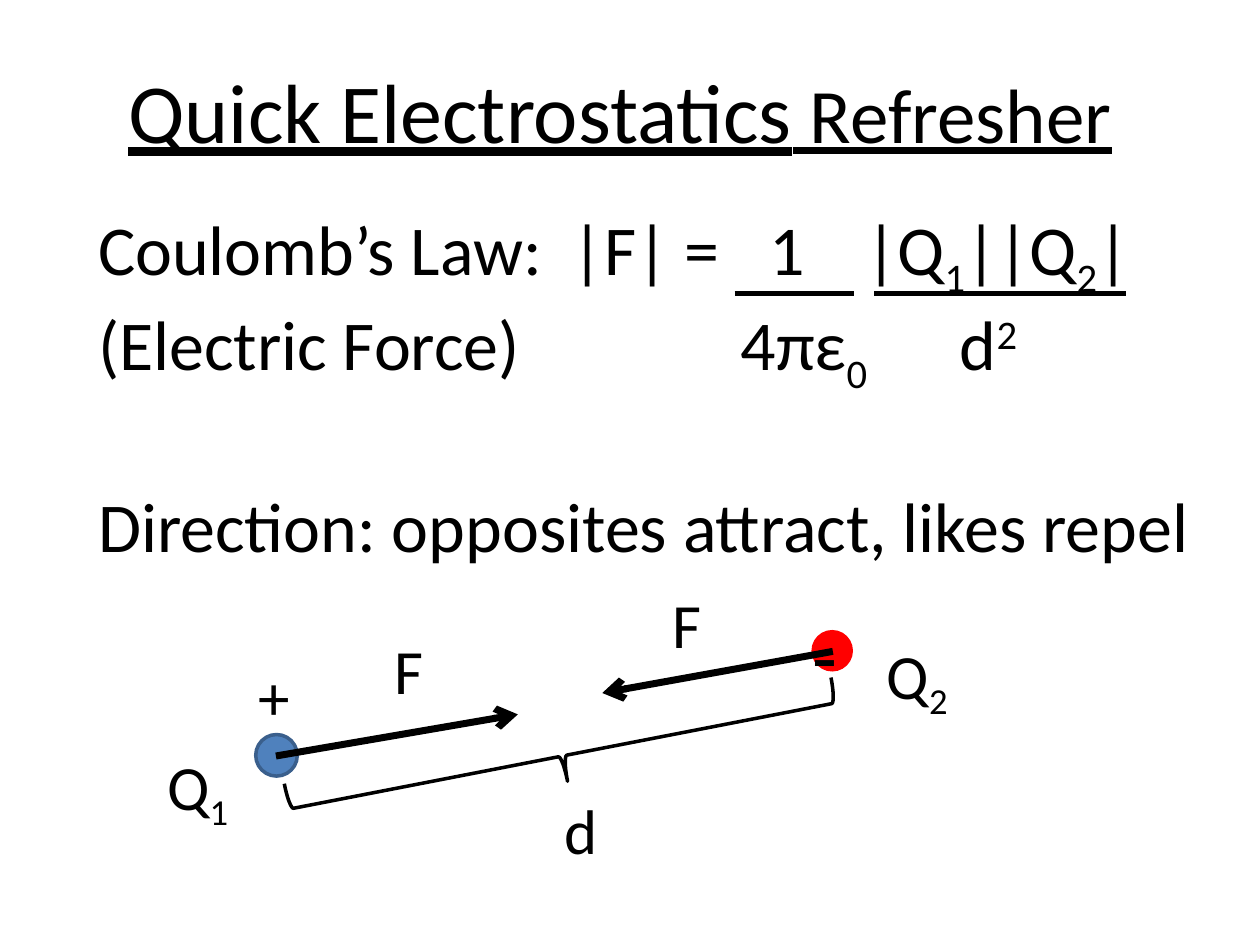
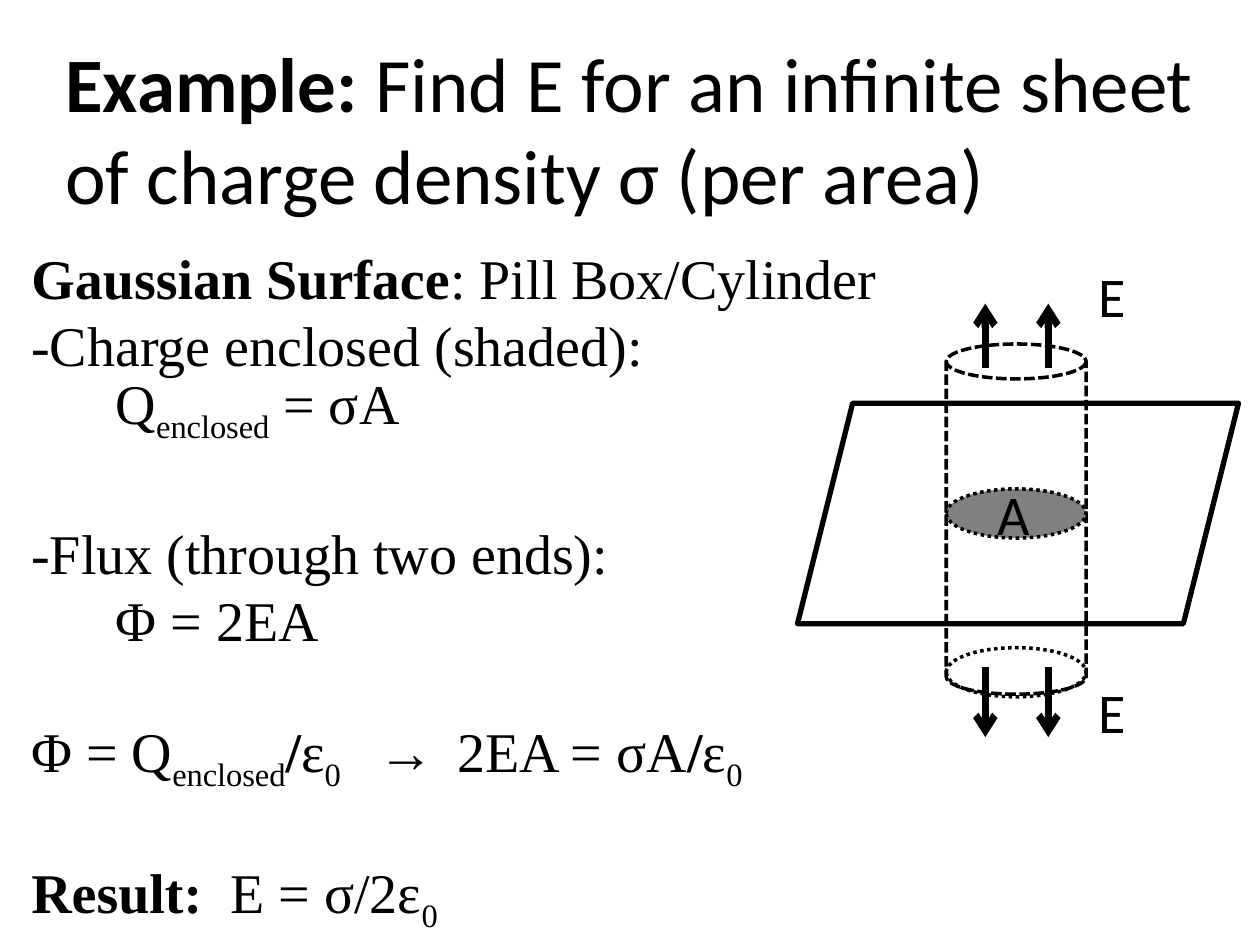
"""Build two electrostatics slides: Coulomb's law and the field of a charged sheet."""
from lxml import etree
from pptx import Presentation
from pptx.dml.color import RGBColor
from pptx.enum.dml import MSO_LINE
from pptx.enum.shapes import MSO_CONNECTOR, MSO_SHAPE
from pptx.oxml.ns import qn
from pptx.util import Inches, Pt

BLACK = RGBColor(0, 0, 0)
WHITE = RGBColor(255, 255, 255)
RED = RGBColor(255, 0, 0)
BLUE = RGBColor(0x4F, 0x81, 0xBD)
NAVY = RGBColor(0x3A, 0x5F, 0x8C)
GRAY = RGBColor(0x80, 0x80, 0x80)
OVAL, BRACE = MSO_SHAPE.OVAL, MSO_SHAPE.RIGHT_BRACE
SHEET, CAN = MSO_SHAPE.PARALLELOGRAM, MSO_SHAPE.CAN
DASH, DOT = MSO_LINE.SQUARE_DOT, MSO_LINE.ROUND_DOT
STRAIGHT = MSO_CONNECTOR.STRAIGHT
SUB, SUP = {"baseline": -25000}, {"baseline": 30000}
BOLD, PLAIN = {"bold": True}, {}


def add_text(slide, box, size, paragraphs, name="Calibri", **shared):
    tf = slide.shapes.add_textbox(*map(Inches, box)).text_frame
    tf.word_wrap = True
    for i, (runs, layout) in enumerate(paragraphs):
        p = tf.paragraphs[0] if i == 0 else tf.add_paragraph()
        layout = {**shared, **layout}
        tabs, indent = layout.pop("tabs", []), layout.pop("indent", 0)
        for key, value in layout.items():
            setattr(p, key, value)
        pPr = p._p.get_or_add_pPr()
        pPr.set("marL", str(Inches(indent)))
        if tabs:
            tab_list = etree.SubElement(pPr, qn("a:tabLst"))
            for pos in tabs:
                etree.SubElement(tab_list, qn("a:tab"), pos=str(Inches(pos)), algn="l")
        for text, style in runs:
            r = p.add_run()
            r.text = text
            r.font.color.rgb = BLACK
            style = {"size": Pt(size), "name": name, **style}
            baseline = style.pop("baseline", 0)
            for key, value in style.items():
                setattr(r.font, key, value)
            if baseline:
                r._r.get_or_add_rPr().set("baseline", str(baseline))


def add_line(slide, ends, width, arrow=False):
    c = slide.shapes.add_connector(STRAIGHT, *map(Inches, ends))
    c.line.color.rgb = BLACK
    c.line.width = Pt(width)
    if arrow:
        etree.SubElement(c.line._get_or_add_ln(), qn("a:tailEnd"), type="arrow")
    etree.SubElement(c._element.spPr, qn("a:effectLst"))


prs = Presentation()
prs.slide_width, prs.slide_height = Inches(10), Inches(7.5)
coulomb, gauss = [prs.slides.add_slide(prs.slide_layouts[6]) for _ in range(2)]

for s, kind, box, fill, color, width, dash, rotation in [
    (coulomb, OVAL, (2.03, 5.83, 0.33, 0.33), BLUE, NAVY, 2, None, 0),
    (coulomb, OVAL, (6.44, 5, 0.33, 0.33), RED, None, 0, None, 0),
    (coulomb, BRACE, (4.26, 3.79, 0.41, 4.42), None, BLACK, 2, None, 79),
    (gauss, SHEET, (6.33, 3.2, 3.5, 1.75), WHITE, BLACK, 3, None, 0),
    (gauss, CAN, (7.51, 2.73, 1.11, 2.78), None, BLACK, 2, DASH, 0),
    (gauss, OVAL, (7.51, 3.88, 1.11, 0.39), GRAY, BLACK, 2, DOT, 0),
    (gauss, OVAL, (7.51, 5.14, 1.11, 0.39), None, BLACK, 2, DOT, 0),
]:
    sp = s.shapes.add_shape(kind, *map(Inches, box))
    sp.shadow.inherit = False
    sp.rotation = rotation
    if fill is None:
        sp.fill.background()
    else:
        sp.fill.solid()
        sp.fill.fore_color.rgb = fill
    if color is None:
        sp.line.fill.background()
    else:
        sp.line.color.rgb = color
        sp.line.width = Pt(width)
        sp.line.dash_style = dash

add_text(coulomb, (0.92, 0.42, 8.33, 0.91), 44, [
    ([("Quick Electrostatics", {"size": Pt(48), "underline": True}),
      (" Refresher", {"underline": True})], {}),
])
add_text(coulomb, (0.68, 1.58, 8.92, 2.79), 40, [
    ([("Coulomb’s Law:\t|F| =\t1\t|Q", PLAIN), ("1", SUB), ("||Q", PLAIN),
      ("2", SUB), ("|", PLAIN)], {"tabs": [3.76, 5.33, 6.09]}),
    ([("(Electric Force)\t4πε", PLAIN), ("0", SUB), ("\td", PLAIN), ("2", SUP)],
     {"tabs": [5.1, 6.84]}),
    ([("Direction: opposites attract, likes repel", PLAIN)], {"space_before": Pt(49)}),
])
for ends in [(2.19, 6, 4.11, 5.67), (6.61, 5.17, 4.78, 5.5)]:
    add_line(coulomb, ends, 4, arrow=True)
for left, right in [(5.83, 6.78), (6.94, 8.94)]:
    add_line(coulomb, (left, 2.33, right, 2.33), 3)
for label, index, x, y, w in [
    ("Q", "1", 1.23, 5.88, 0.8), ("Q", "2", 6.94, 5, 0.8), ("+", "", 1.95, 5.17, 0.41),
    ("d", "", 4.38, 6.23, 0.8), ("F", "", 3.03, 4.96, 0.4), ("F", "", 5.24, 4.6, 0.4),
]:
    runs = [(label, PLAIN)] + ([(index, SUB)] if index else [])
    add_text(coulomb, (x, y, w, 0.71), 36, [(runs, {})])
add_text(coulomb, (6.35, 4.01, 0.64, 1), 80, [([("-", SUB)], {})])

add_text(gauss, (0.42, 0.23, 9.42, 1.58), 44, [
    ([("Example:", BOLD),
      (" Find E for an infinite sheet of charge density σ (per area)", PLAIN)], {}),
])
for x in (7.82, 8.32):
    for start, end in [(2.92, 2.41), (5.29, 5.85)]:
        add_line(gauss, (x, start, x, end), 4, arrow=True)
for label, x, y in [("A", 7.82, 3.76), ("E", 8.62, 2.03), ("E", 8.62, 5.33)]:
    add_text(gauss, (x, y, 0.5, 0.64), 32, [([(label, PLAIN)], {})])

STEP = {"space_before": Pt(42)}
INDENT = {"indent": 0.67}
add_text(gauss, (0.15, 1.88, 7.08, 5.79), 32, [
    ([("Gaussian Surface", BOLD), (": Pill Box/Cylinder", PLAIN)], {}),
    ([("-Charge enclosed (shaded):", PLAIN)], {}),
    ([("Q", PLAIN), ("enclosed", SUB), (" = σA", PLAIN)], INDENT),
    ([("-Flux (through two ends):", PLAIN)], STEP),
    ([("Φ = 2EA", PLAIN)], INDENT),
    ([("Φ = Q", PLAIN), ("enclosed", SUB), ("/", BOLD), ("ε", PLAIN), ("0", SUB),
      ("\t→\t", BOLD), ("2EA = σA", PLAIN), ("/", BOLD), ("ε", PLAIN), ("0", SUB)],
     {**STEP, "tabs": [2.75, 3.38]}),
    ([("Result:", BOLD), ("\tE = σ/2ε", PLAIN), ("0", SUB)], {**STEP, "tabs": [1.58]}),
], name="Times New Roman", line_spacing=Pt(38.4))

prs.save("out.pptx")
